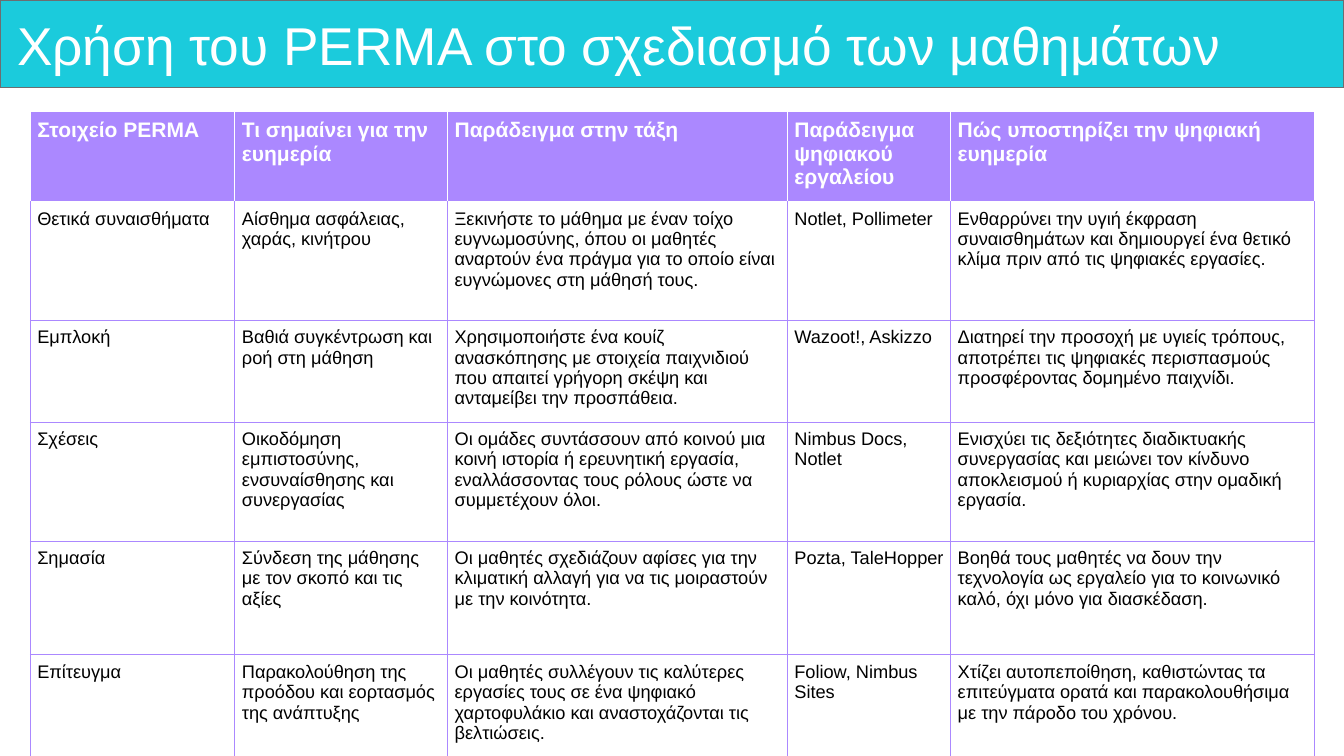
from dataclasses import dataclass

from lxml.etree import SubElement
from pptx import Presentation
from pptx.dml.color import RGBColor as Color
from pptx.enum.shapes import MSO_SHAPE as Preset
from pptx.enum.text import MSO_ANCHOR as Anchor, PP_ALIGN as Align
from pptx.oxml.ns import qn
from pptx.util import Inches, Pt


@dataclass(frozen=True)
class Theme:
    font: str = "Arial"
    banner: str = "1BCBDC"
    banner_line: str = "6C6E70"
    purple: str = "AB88FF"
    white: str = "FFFFFF"
    black: str = "000000"
    title_size: int = 38
    header_size: int = 15
    body_size: int = 13


theme = Theme()


def style_text(para, size, color, bold=False):
    para.alignment = Align.LEFT
    for span in para.runs:
        span.font.name = theme.font
        span.font.size = Pt(size)
        span.font.bold = bold
        span.font.color.rgb = Color.from_string(color)


def draw_borders(cell, colors):
    properties = cell._tc.get_or_add_tcPr()
    for side, color in zip("LRTB", colors):
        line = SubElement(properties, qn(f"a:ln{side}"), w=str(Pt(0.75)))
        fill = SubElement(line, qn("a:solidFill"))
        SubElement(fill, qn("a:srgbClr"), val=color)


rows = [
    ["Στοιχείο PERMA", "Τι σημαίνει για την ευημερία", "Παράδειγμα στην τάξη",
     "Παράδειγμα ψηφιακού εργαλείου", "Πώς υποστηρίζει την ψηφιακή ευημερία"],
    ["Θετικά συναισθήματα", "Αίσθημα ασφάλειας, χαράς, κινήτρου",
     "Ξεκινήστε το μάθημα με έναν τοίχο ευγνωμοσύνης, όπου οι μαθητές αναρτούν "
     "ένα πράγμα για το οποίο είναι ευγνώμονες στη μάθησή τους.",
     "Notlet, Pollimeter",
     "Ενθαρρύνει την υγιή έκφραση συναισθημάτων και δημιουργεί ένα θετικό κλίμα "
     "πριν από τις ψηφιακές εργασίες."],
    ["Εμπλοκή", "Βαθιά συγκέντρωση και ροή στη μάθηση",
     "Χρησιμοποιήστε ένα κουίζ ανασκόπησης με στοιχεία παιχνιδιού που απαιτεί "
     "γρήγορη σκέψη και ανταμείβει την προσπάθεια.",
     "Wazoot!, Askizzo",
     "Διατηρεί την προσοχή με υγιείς τρόπους, αποτρέπει τις ψηφιακές "
     "περισπασμούς προσφέροντας δομημένο παιχνίδι."],
    ["Σχέσεις", "Οικοδόμηση εμπιστοσύνης, ενσυναίσθησης και συνεργασίας",
     "Οι ομάδες συντάσσουν από κοινού μια κοινή ιστορία ή ερευνητική εργασία, "
     "εναλλάσσοντας τους ρόλους ώστε να συμμετέχουν όλοι.",
     "Nimbus Docs, Notlet",
     "Ενισχύει τις δεξιότητες διαδικτυακής συνεργασίας και μειώνει τον κίνδυνο "
     "αποκλεισμού ή κυριαρχίας στην ομαδική εργασία."],
    ["Σημασία", "Σύνδεση της μάθησης με τον σκοπό και τις αξίες",
     "Οι μαθητές σχεδιάζουν αφίσες για την κλιματική αλλαγή για να τις "
     "μοιραστούν με την κοινότητα.",
     "Pozta, TaleHopper",
     "Βοηθά τους μαθητές να δουν την τεχνολογία ως εργαλείο για το κοινωνικό "
     "καλό, όχι μόνο για διασκέδαση."],
    ["Επίτευγμα", "Παρακολούθηση της προόδου και εορτασμός της ανάπτυξης",
     "Οι μαθητές συλλέγουν τις καλύτερες εργασίες τους σε ένα ψηφιακό "
     "χαρτοφυλάκιο και αναστοχάζονται τις βελτιώσεις.",
     "Foliow, Nimbus Sites",
     "Χτίζει αυτοπεποίθηση, καθιστώντας τα επιτεύγματα ορατά και "
     "παρακολουθήσιμα με την πάροδο του χρόνου."],
]
column_widths = [2.03, 2.11, 3.37, 1.62, 3.61]
row_heights = [0.83, 1.18, 0.97, 1.18, 1.13, 0.95]

deck = Presentation()
deck.slide_width = Inches(13.33)
deck.slide_height = Inches(7.5)
page = deck.slides.add_slide(deck.slide_layouts[6])

banner = page.shapes.add_shape(
    Preset.RECTANGLE, Inches(0), Inches(0), deck.slide_width, Inches(0.87))
banner.shadow.inherit = False
banner.fill.solid()
banner.fill.fore_color.rgb = Color.from_string(theme.banner)
banner.line.color.rgb = Color.from_string(theme.banner_line)
banner.line.width = Pt(1)

title = page.shapes.add_textbox(Inches(0.11), Inches(0.09), Inches(13.06), Inches(0.78))
frame = title.text_frame
frame.word_wrap = True
frame.vertical_anchor = Anchor.MIDDLE
frame.margin_left = frame.margin_right = Inches(0.06)
frame.margin_top = frame.margin_bottom = Inches(0.06)
frame.text = "Χρήση του PERMA στο σχεδιασμό των μαθημάτων"
frame.paragraphs[0].line_spacing = 0.9
style_text(frame.paragraphs[0], theme.title_size, theme.white)

table = page.shapes.add_table(
    len(rows), len(column_widths), Inches(0.3), Inches(1.11),
    Inches(sum(column_widths)), Inches(sum(row_heights))).table
table.first_row = False
table.horz_banding = False
for column, width in zip(table.columns, column_widths):
    column.width = Inches(width)

for row_index, (texts, height) in enumerate(zip(rows, row_heights)):
    table.rows[row_index].height = Inches(height)
    is_header = row_index == 0
    for column_index, text in enumerate(texts):
        cell = table.cell(row_index, column_index)
        cell.margin_left = cell.margin_right = Inches(0.07)
        cell.margin_top = cell.margin_bottom = Inches(0.07)
        cell.vertical_anchor = Anchor.TOP
        cell.text_frame.text = text
        para = cell.text_frame.paragraphs[0]
        if is_header:
            draw_borders(cell, [theme.white] * 4)
            cell.fill.solid()
            cell.fill.fore_color.rgb = Color.from_string(theme.purple)
            style_text(para, theme.header_size, theme.white, bold=True)
        else:
            top = theme.white if row_index == 1 else theme.purple
            draw_borders(cell, [theme.purple, theme.purple, top, theme.purple])
            cell.fill.background()
            style_text(para, theme.body_size, theme.black)

deck.save("out.pptx")
